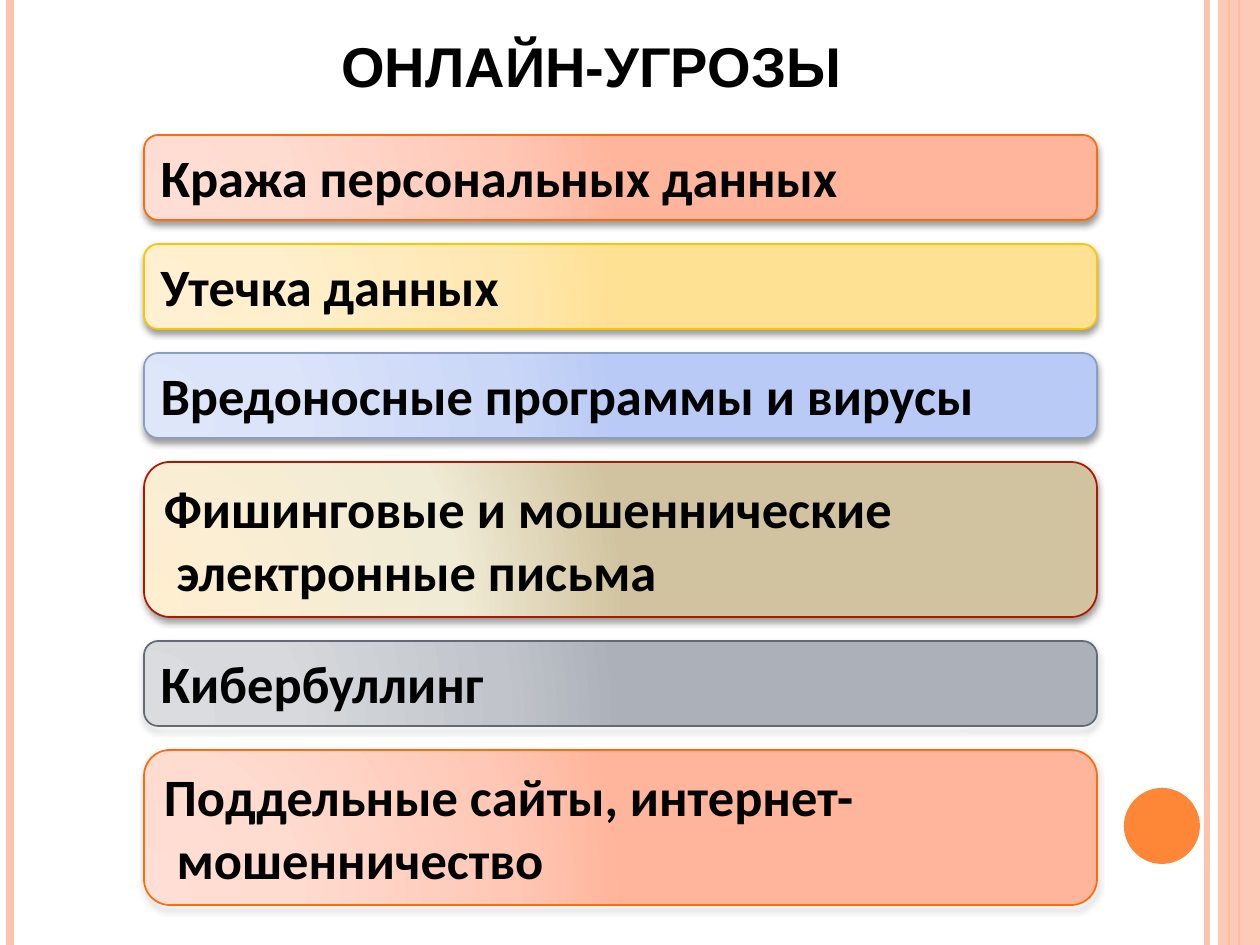
from lxml import etree
from pptx import Presentation
from pptx.dml.color import RGBColor
from pptx.enum.shapes import MSO_CONNECTOR, MSO_SHAPE
from pptx.enum.text import MSO_ANCHOR, MSO_AUTO_SIZE, PP_ALIGN
from pptx.oxml import parse_xml
from pptx.oxml.ns import nsdecls, qn
from pptx.util import Emu, Pt

STRAIGHT = MSO_CONNECTOR.STRAIGHT
RECTANGLE, OVAL = MSO_SHAPE.RECTANGLE, MSO_SHAPE.OVAL
ROUNDED = MSO_SHAPE.ROUNDED_RECTANGLE
TOP = MSO_ANCHOR.TOP
NO_FIT, GROW = MSO_AUTO_SIZE.NONE, MSO_AUTO_SIZE.SHAPE_TO_FIT_TEXT
CENTER, LEFT = PP_ALIGN.CENTER, PP_ALIGN.LEFT

PX = 914400 / 126
WIDTH, HEIGHT = 1260, 945
PEACH, ORANGE = "FEC3AE", "FE8637"


def rgb(value):
    return RGBColor.from_string(value)


def px(*lengths):
    return [Emu(round(length * PX)) for length in lengths]


deck = Presentation()
deck.slide_width, deck.slide_height = px(WIDTH, HEIGHT)
page = deck.slides.add_slide(deck.slide_layouts[5])
shapes = page.shapes

# Side stripes: x, colour, width in points
stripes = [(1207, PEACH, 3), (10, PEACH, 4.5), (1239, ORANGE, 0.75), (1229, ORANGE, 1.5)]
for x, color, weight in stripes:
    stripe = shapes.add_connector(STRAIGHT, *px(x, 0, x, HEIGHT))
    stripe.line.color.rgb = rgb(color)
    stripe.line.width = Pt(weight)
    etree.SubElement(stripe.element.spPr, qn("a:effectLst"))

# Right band and page dot: kind, place, colour, opacity in percent
decorations = [
    (RECTANGLE, (1218, 0, 42, HEIGHT), PEACH, 87),
    (OVAL, (1124, 788, 76, 76), ORANGE, 100),
]
for kind, place, color, opacity in decorations:
    decoration = shapes.add_shape(kind, *px(*place))
    decoration.shadow.inherit = False
    decoration.line.fill.background()
    decoration.fill.solid()
    decoration.fill.fore_color.rgb = rgb(color)
    if opacity < 100:
        tone = decoration.element.spPr.find(".//" + qn("a:srgbClr"))
        etree.SubElement(tone, qn("a:alpha"), val=str(opacity * 1000))

# Title
title = shapes.title
title.left, title.top, title.width, title.height = px(35, 26, 1113, 90)
frame = title.text_frame
frame.auto_size = NO_FIT
frame.vertical_anchor = TOP
frame.margin_left = frame.margin_right = frame.margin_bottom = 0
frame.margin_top = px(5)[0]
para = frame.paragraphs[0]
para.alignment = CENTER
span = para.add_run()
span.text = "ОНЛАЙН-УГРОЗЫ"
span.font.name, span.font.size, span.font.bold = "Arial", Pt(32), True
span.font.color.rgb = rgb("000000")

# Threat cards: text, height, outline, gradient stops
coral = [(0, "FFDED5"), (30, "FFDBD0"), (75, "FFC8B6"), (100, "FFB59B")]
yellow = [(0, "FFF0D1"), (30, "FFEFCC"), (75, "FFE7B1"), (100, "FFE193")]
blue = [(0, "DEE6FA"), (30, "DBE4F9"), (75, "CAD7F7"), (100, "B8CAF5")]
sand = [(0, "FFEFD1"), (65, "F0EBD5"), (100, "D1C39F")]
gray = [(0, "DADCE0"), (30, "D7D9DD"), (75, "C1C5CB"), (100, "ABB0B9")]
SINGLE, DOUBLE, GAP = 85, 155, 24
threats = [
    ("Кража персональных данных", SINGLE, "FF6B0A", coral),
    ("Утечка данных", SINGLE, "F8C700", yellow),
    ("Вредоносные программы и вирусы", SINGLE, "8D9CBF", blue),
    ("Фишинговые и мошеннические электронные письма", DOUBLE, "AC1800", sand),
    ("Кибербуллинг", SINGLE, "636A74", gray),
    ("Поддельные сайты, интернет-мошенничество", DOUBLE, "FF6B0A", coral),
]
top = 135
for text, height, outline, stops in threats:
    card = shapes.add_shape(ROUNDED, *px(144, top, 953, height))
    top += height + GAP
    card.line.color.rgb = rgb(outline)
    card.line.width = Pt(1)

    # Radial gradient and soft shadow
    stop_xml = "".join(
        f'<a:gs pos="{at * 1000}"><a:srgbClr val="{color}"/></a:gs>' for at, color in stops
    )
    gradient = parse_xml(
        f'<a:gradFill {nsdecls("a")} rotWithShape="1"><a:gsLst>{stop_xml}</a:gsLst>'
        '<a:path path="circle"><a:fillToRect l="5000" t="100000" r="120000" b="10000"/>'
        "</a:path></a:gradFill>"
    )
    shadow = parse_xml(
        f'<a:effectLst {nsdecls("a")}><a:outerShdw blurRad="{Pt(4)}" dist="{Pt(2)}" '
        'dir="5400000" rotWithShape="0"><a:srgbClr val="000000"><a:alpha val="40000"/>'
        "</a:srgbClr></a:outerShdw></a:effectLst>"
    )
    outline_element = card.element.spPr.find(qn("a:ln"))
    outline_element.addprevious(gradient)
    outline_element.addnext(shadow)

    # Card text with a hanging indent
    frame = card.text_frame
    frame.word_wrap = True
    frame.auto_size = GROW
    frame.vertical_anchor = TOP
    para = frame.paragraphs[0]
    para.alignment = LEFT
    para.space_before, para.space_after = Pt(6), Pt(6)
    indent = Emu(91440)
    properties = para._p.get_or_add_pPr()
    properties.set("marL", str(indent))
    properties.set("indent", str(-indent))
    span = para.add_run()
    span.text = text
    span.font.name, span.font.size, span.font.bold = "Calibri", Pt(30), True
    span.font.color.rgb = rgb("000000")

deck.save("out.pptx")
